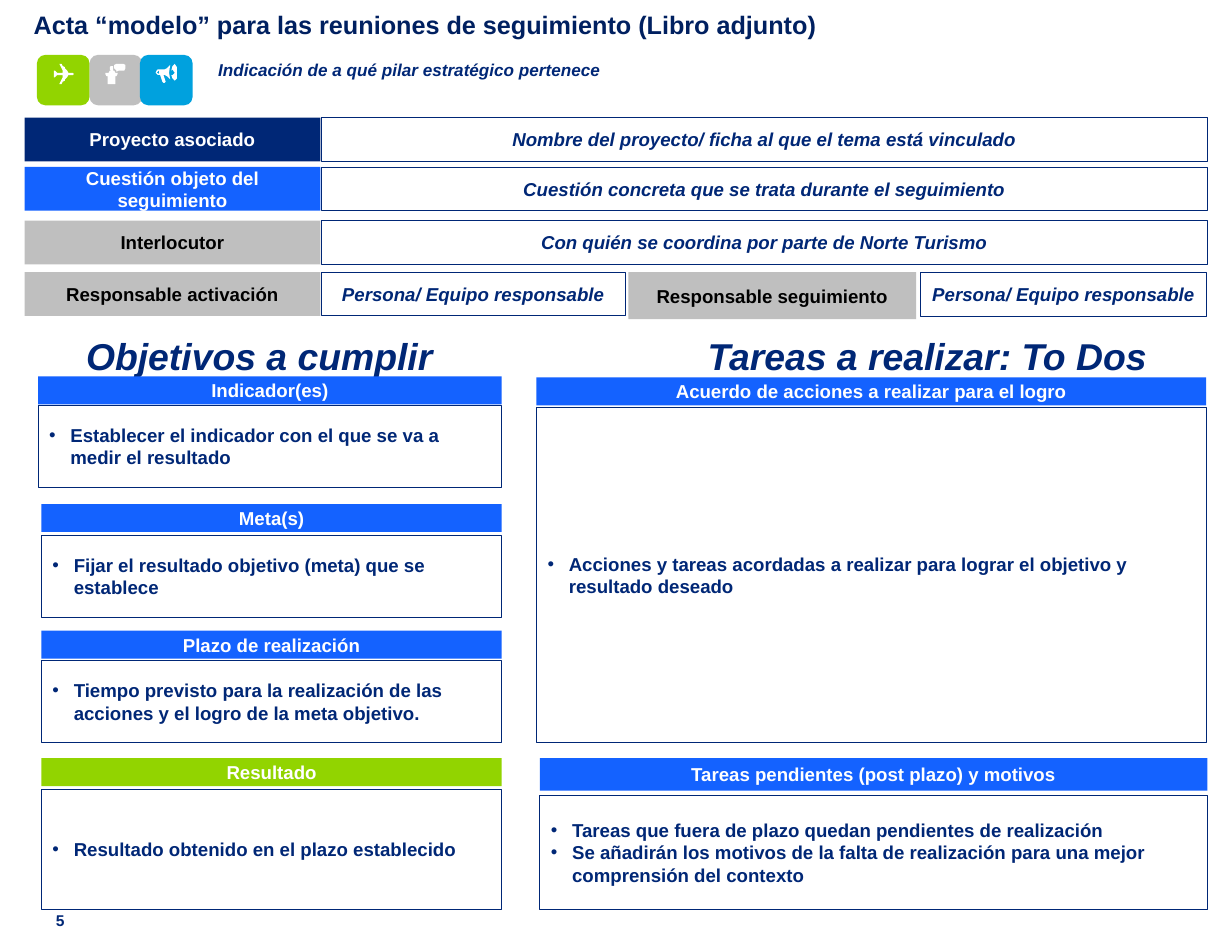
from lxml import etree
from pptx import Presentation
from pptx.dml.color import RGBColor
from pptx.enum.shapes import MSO_SHAPE as Shape
from pptx.enum.text import MSO_ANCHOR as Anchor, MSO_AUTO_SIZE as AutoSize, PP_ALIGN as Align
from pptx.oxml.ns import qn
from pptx.util import Inches, Pt

NAVY, BLUE, GRAY, GREEN, CYAN = "002776", "1462FF", "BFBFBF", "92D400", "00A1DE"
WHITE, BLACK, TITLE_COLOR = "FFFFFF", "000000", "002060"

# Icon outlines, in hundredths of an inch on the slide
WING = [(66, 66), (65, 65), (61, 65), (60, 63), (58, 61), (58, 60), (56, 59), (55, 57),
        (53, 57), (56, 63), (56, 65), (55, 65), (51, 65), (49, 63), (48, 63), (48, 66)]
PLANE = [WING + [(x, 132 - y) for x, y in reversed(WING)]]
GUIDE = [
    [(104, 57), (110, 57), (112, 58), (112, 61), (111, 63), (106, 63), (104, 64),
     (104, 63), (102, 61), (102, 58)],
    [(103, 68), (104, 68), (105, 66), (105, 65), (103, 65), (102, 63), (101, 63), (101, 59),
     (100, 59), (99, 59), (98, 60), (98, 62), (99, 63), (98, 63), (97, 65), (94, 65),
     (94, 66), (95, 68), (96, 68), (96, 75), (103, 75)],
]
HORN = [
    [(147, 62), (141, 62), (139.5, 63), (139, 65), (139.5, 66), (141, 67), (143, 67),
     (145, 73), (146, 74.5), (147, 74.5), (147.5, 73), (146, 67), (147, 67), (149, 68),
     (152, 71), (151, 65), (152, 58), (149, 61)],
    [(142, 66), (140, 65), (142, 63)],
]
BELL = [[(156, 57), (154, 59), (153, 63), (154, 62), (156, 65), (154, 67), (153, 67),
         (154, 70), (156, 72), (157.5, 70), (158, 65), (157.5, 60)]]


def rgb(color):
    return RGBColor.from_string(color)


class ActaSlide:
    font = {"name": "Arial", "bold": True}
    indent = Inches(0.19)

    def __init__(self, deck):
        self.slide = deck.slides.add_slide(deck.slide_layouts[5])
        self.shapes = self.slide.shapes

    def add_text(self, paragraph, text, color, **fmt):
        run = paragraph.add_run()
        run.text = text
        for key, value in {**self.font, **fmt}.items():
            setattr(run.font, key, value)
        run.font.color.rgb = rgb(color)

    def paint(self, shape, fill, outline=None):
        shape.shadow.inherit = False
        shape.fill.solid()
        shape.fill.fore_color.rgb = rgb(fill)
        if outline:
            shape.line.color.rgb = rgb(outline)
            shape.line.width = Pt(0.5)
        else:
            shape.line.fill.background()

    def strip_margins(self, frame):
        for side in ("left", "top", "right", "bottom"):
            setattr(frame, f"margin_{side}", 0)

    def title(self, box, text):
        heading = self.shapes.title
        heading.left, heading.top, heading.width, heading.height = map(Inches, box)
        frame = heading.text_frame
        self.strip_margins(frame)
        frame.auto_size = AutoSize.NONE
        frame.vertical_anchor = Anchor.TOP
        frame.paragraphs[0].alignment = Align.LEFT
        self.add_text(frame.paragraphs[0], text, TITLE_COLOR, size=Pt(16.2))

    def page_number(self, box, text):
        frame = self.shapes.add_textbox(*map(Inches, box)).text_frame
        self.strip_margins(frame)
        frame.word_wrap = True
        frame.paragraphs[0].line_spacing = Pt(12)
        self.add_text(frame.paragraphs[0], text, NAVY, size=Pt(10))

    def caption(self, box, text, size):
        frame = self.shapes.add_textbox(*map(Inches, box)).text_frame
        frame.word_wrap = False
        self.add_text(frame.paragraphs[0], text, NAVY, size=Pt(size), italic=True)

    def block(self, box, fill, outline=None):
        shape = self.shapes.add_shape(Shape.RECTANGLE, *map(Inches, box))
        self.paint(shape, fill, outline)
        frame = shape.text_frame
        frame.word_wrap = True
        frame.vertical_anchor = Anchor.MIDDLE
        return frame

    def label(self, box, text, fill, color=WHITE):
        paragraph = self.block(box, fill).paragraphs[0]
        paragraph.alignment = Align.CENTER
        self.add_text(paragraph, text, color, size=Pt(12))

    def value(self, box, text):
        paragraph = self.block(box, WHITE, NAVY).paragraphs[0]
        paragraph.alignment = Align.CENTER
        self.add_text(paragraph, text, NAVY, size=Pt(12), italic=True)

    def bullets(self, box, items):
        frame = self.block(box, WHITE, NAVY)
        for number, item in enumerate(items):
            paragraph = frame.add_paragraph() if number else frame.paragraphs[0]
            paragraph.alignment = Align.LEFT
            props = paragraph._p.get_or_add_pPr()
            props.set("marL", str(self.indent))
            props.set("indent", str(-self.indent))
            etree.SubElement(props, qn("a:buFont")).set("typeface", "Arial")
            etree.SubElement(props, qn("a:buChar")).set("char", "•")
            self.add_text(paragraph, item, NAVY, size=Pt(12))

    def pillar(self, left, color, icons):
        """Rounded tile with its white icon, as one group."""
        group = self.shapes.add_group_shape().shapes
        tile = group.add_shape(Shape.ROUNDED_RECTANGLE, *map(Inches, (left, 0.49, 0.47, 0.45)))
        self.paint(tile, color)
        for contours in icons:
            first, *others = contours
            builder = group.build_freeform(*first[0], scale=Inches(0.01))
            builder.add_line_segments(first[1:])
            for contour in others:
                builder.move_to(*contour[0])
                builder.add_line_segments(contour[1:])
            self.paint(builder.convert_to_shape(), WHITE)


def main():
    deck = Presentation()
    deck.slide_width, deck.slide_height = Inches(11), Inches(8.5)
    acta = ActaSlide(deck)

    acta.title((0.3, 0.08, 9.21, 0.26),
               "Acta “modelo” para las reuniones de seguimiento (Libro adjunto)")
    acta.page_number((0.5, 8.13, 0.34, 0.18), "5")

    for left, color, icons in ((0.33, GREEN, [PLANE]), (0.8, GRAY, [GUIDE]),
                               (1.25, CYAN, [HORN, BELL])):
        acta.pillar(left, color, icons)
    acta.caption((1.85, 0.48, 3.63, 0.29), "Indicación de a qué pilar estratégico pertenece", 11)

    person = "Persona/ Equipo responsable"
    rows = [
        (1.05, "Proyecto asociado", NAVY, WHITE, 7.91,
         "Nombre del proyecto/ ficha al que el tema está vinculado"),
        (1.49, "Cuestión objeto del seguimiento", BLUE, WHITE, 7.91,
         "Cuestión concreta que se trata durante el seguimiento"),
        (1.97, "Interlocutor", GRAY, BLACK, 7.91,
         "Con quién se coordina por parte de Norte Turismo"),
        (2.43, "Responsable activación", GRAY, BLACK, 2.71, person),
    ]
    for top, name, fill, color, width, content in rows:
        acta.value((2.87, top, width, 0.39), content)
        acta.label((0.22, top, 2.64, 0.39), name, fill, color)
    acta.label((5.61, 2.43, 2.57, 0.42), "Responsable seguimiento", GRAY, BLACK)
    acta.value((8.22, 2.43, 2.55, 0.4), person)

    acta.caption((0.67, 2.93, 3.32, 0.5), "Objetivos a cumplir", 24)
    acta.caption((6.22, 2.93, 4.16, 0.5), "Tareas a realizar: To Dos", 24)

    # left, width, header top and height, body top and height
    panels = [
        (0.34, 4.14, 3.36, 0.25, 3.62, 0.73, BLUE, "Indicador(es)",
         ["Establecer el indicador con el que se va a medir el resultado"]),
        (0.37, 4.11, 4.5, 0.25, 4.78, 0.73, BLUE, "Meta(s)",
         ["Fijar el resultado objetivo (meta) que se establece"]),
        (0.37, 4.11, 5.63, 0.25, 5.9, 0.73, BLUE, "Plazo de realización",
         ["Tiempo previsto para la realización de las acciones y el logro de la meta objetivo."]),
        (0.37, 4.11, 6.77, 0.25, 7.05, 1.07, GREEN, "Resultado",
         ["Resultado obtenido en el plazo establecido"]),
        (4.79, 5.98, 3.37, 0.25, 3.64, 2.99, BLUE, "Acuerdo de acciones a realizar para el logro",
         ["Acciones y tareas acordadas a realizar para lograr el objetivo y resultado deseado"]),
        (4.82, 5.96, 6.77, 0.29, 7.1, 1.02, BLUE, "Tareas pendientes (post plazo) y motivos",
         ["Tareas que fuera de plazo quedan pendientes de realización",
          "Se añadirán los motivos de la falta de realización para una mejor "
          "comprensión del contexto"]),
    ]
    for left, width, top, height, body_top, body_height, fill, name, items in panels:
        acta.bullets((left, body_top, width, body_height), items)
        acta.label((left, top, width, height), name, fill)

    deck.save("out.pptx")


if __name__ == "__main__":
    main()
